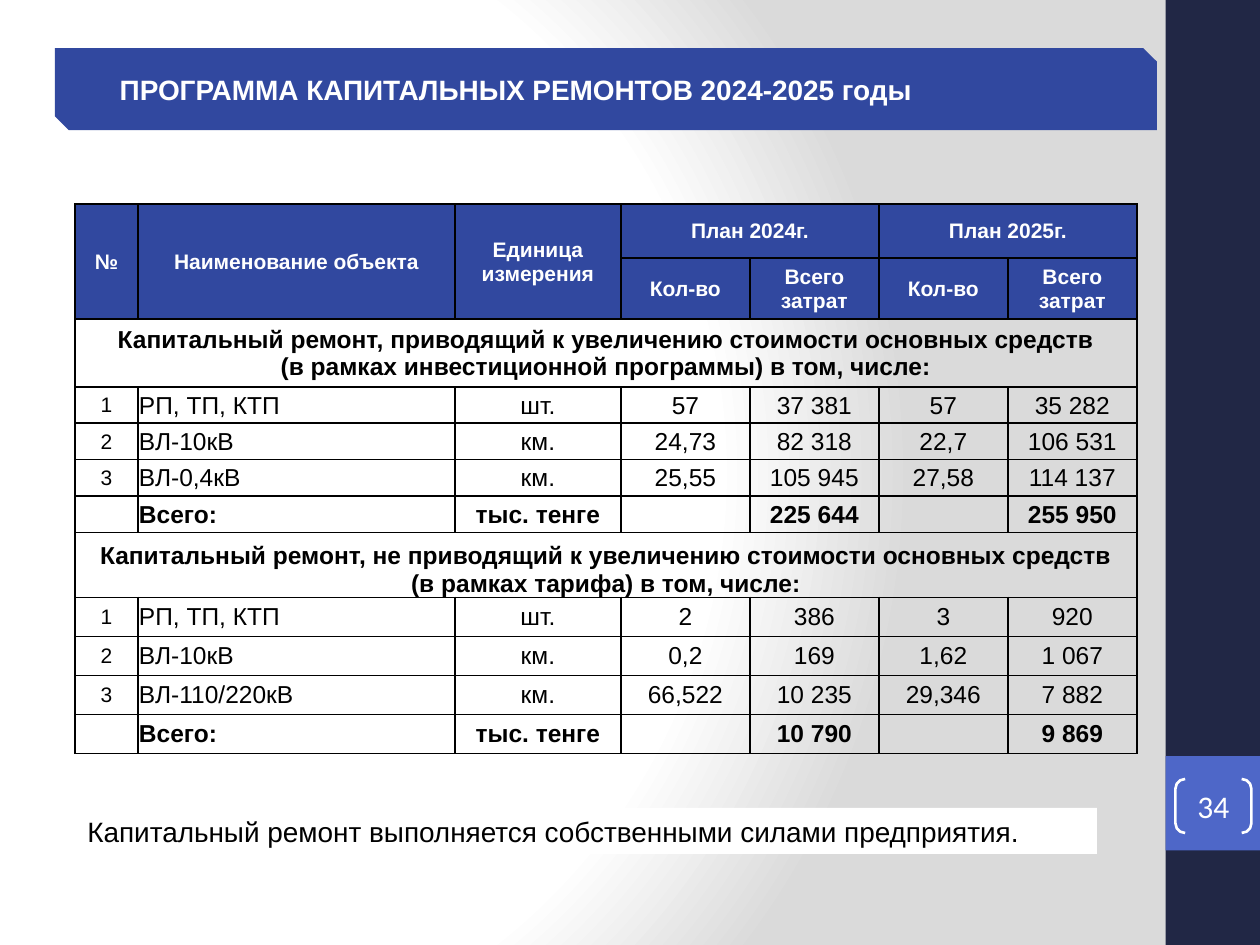
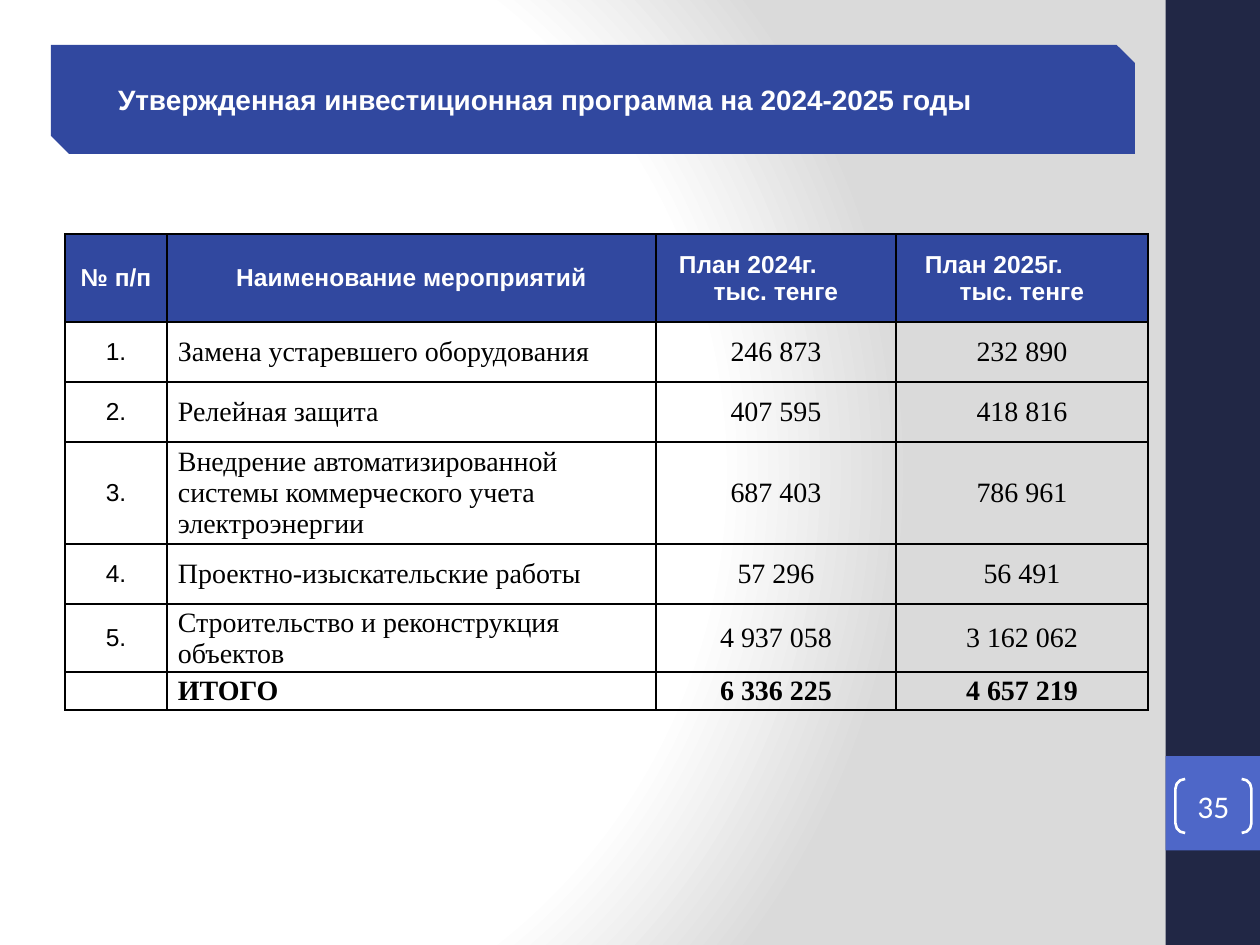
from dataclasses import dataclass

from lxml import etree
from pptx import Presentation
from pptx import util as u
from pptx.dml.color import RGBColor
from pptx.enum import shapes, text
from pptx.oxml import ns, parse_xml

PX = u.Inches(1) // 126
CENTER, LEFT = text.PP_ALIGN.CENTER, text.PP_ALIGN.LEFT
MIDDLE, BOTTOM = text.MSO_ANCHOR.MIDDLE, text.MSO_ANCHOR.BOTTOM
SHAPE = shapes.MSO_SHAPE


@dataclass(frozen=True)
class Theme:
    white: str = "FFFFFF"
    black: str = "000000"
    grey: str = "DADADA"
    navy: str = "212745"
    accent: str = "4E67C8"
    blue: str = "31489F"
    sans: str = "Arial"
    serif: str = "Times New Roman"
    number: str = "Calibri"
    small: int = 12
    body: int = 14
    large: int = 16
    page: int = 18
    border: int = 1


T = Theme()


def px(n):
    return int(n * PX)


def rgb(value):
    return RGBColor.from_string(value)


def set_background(s):
    """Radial white-to-grey gradient, centred left of the middle."""
    s.background.fill.solid()
    bg = s.element.find(".//" + ns.qn("p:bgPr"))
    stops = ((0, T.white), (75, T.white), (100, T.grey))
    gs = "".join(f'<a:gs pos="{pos * 1000}"><a:srgbClr val="{c}"/></a:gs>'
                 for pos, c in stops)
    bg.replace(bg[0], parse_xml(
        f'<a:gradFill {ns.nsdecls("a")} rotWithShape="1"><a:gsLst>{gs}</a:gsLst>'
        '<a:path path="circle"><a:fillToRect l="20000" t="50000" r="100000" '
        'b="50000"/></a:path></a:gradFill>'))


def add_box(s, box, fill=None, kind=SHAPE.RECTANGLE):
    sp = s.shapes.add_shape(kind, *map(px, box))
    sp.shadow.inherit = False
    sp.line.fill.background()
    if fill:
        sp.fill.solid()
        sp.fill.fore_color.rgb = rgb(fill)
    else:
        sp.fill.background()
    return sp


def set_insets(frame, left, top, right, bottom):
    frame.margin_left, frame.margin_top = px(left), px(top)
    frame.margin_right, frame.margin_bottom = px(right), px(bottom)


def write(p, words, size, color=T.black, font=T.sans, bold=False,
          align=LEFT, indent=0):
    p.alignment = align
    if indent:
        p._p.get_or_add_pPr().set("marL", str(px(indent)))
    r = p.add_run()
    r.text = words
    r.font.size, r.font.name, r.font.bold = u.Pt(size), font, bold
    r.font.color.rgb = rgb(color)


def add_side_band(s, box, number):
    x, y, w, h = box
    add_box(s, box, T.navy)
    tile_y = y + h * 4 // 5
    add_box(s, (x, tile_y, w, w), T.accent)
    sp = add_box(s, (x + 10, tile_y + 23, 76, 54), kind=SHAPE.DOUBLE_BRACKET)
    sp.adjustments[0] = 0.18
    sp.line.color.rgb = rgb(T.white)
    sp.line.width = u.Pt(1.5)
    tf = sp.text_frame
    tf.vertical_anchor = MIDDLE
    set_insets(tf, 0, 0, 0, 0)
    write(tf.paragraphs[0], str(number), T.page, T.white, T.number, align=CENTER)


def add_title(s, box, words):
    tf = add_box(s, box, T.blue, SHAPE.SNIP_2_DIAG_RECTANGLE).text_frame
    tf.word_wrap = True
    tf.vertical_anchor = MIDDLE
    set_insets(tf, 9, 5, 9, 5)
    write(tf.paragraphs[0], words, T.large, T.white, bold=True, indent=49)


def add_note(s, box, words):
    tf = add_box(s, box, T.white).text_frame
    tf.word_wrap = True
    tf.vertical_anchor = MIDDLE
    write(tf.paragraphs[0], words, T.large)


def style_cell(cell, fill):
    cell.vertical_anchor = MIDDLE
    set_insets(cell, 1, 1, 1, 0)
    tc_pr = cell._tc.get_or_add_tcPr()
    for side in ("lnL", "lnR", "lnT", "lnB"):
        tc_pr.append(parse_xml(
            f'<a:{side} {ns.nsdecls("a")} w="{u.Pt(T.border)}"><a:solidFill>'
            f'<a:srgbClr val="{T.black}"/></a:solidFill></a:{side}>'))
    if fill:
        cell.fill.solid()
        cell.fill.fore_color.rgb = rgb(fill)
    else:
        cell.fill.background()


def add_grid(s, origin, cols, rows, header_rows):
    """Bordered empty table with blue header rows."""
    x, y = origin
    table = s.shapes.add_table(len(rows), len(cols), px(x), px(y),
                               px(sum(cols)), px(sum(rows))).table
    table.first_row = table.horz_banding = False
    for col, width in zip(table.columns, cols):
        col.width = px(width)
    for i, (row, height) in enumerate(zip(table.rows, rows)):
        row.height = px(height)
        for cell in row.cells:
            style_cell(cell, T.blue if i < header_rows else None)
    return table


def write_cell(cell, words, size, **style):
    """One paragraph per line; an empty cell only keeps its type size."""
    tf = cell.text_frame
    if not words:
        end = etree.SubElement(tf.paragraphs[0]._p, ns.qn("a:endParaRPr"))
        end.set("sz", str(size * 100))
        return
    for i, line in enumerate(words.split("\n")):
        p = tf.add_paragraph() if i else tf.paragraphs[0]
        write(p, line, size, **style)


def add_repairs_table(s, origin):
    cols = [63, 317, 166] + [129] * 4
    rows = [54, 61, 68] + [36.4] * 4 + [65] + [39] * 4
    table = add_grid(s, origin, cols, rows, 2)
    heads = {(0, 0): "№", (0, 1): "Наименование объекта",
             (0, 2): "Единица измерения",
             (0, 3): "План 2024г.", (0, 5): "План 2025г."}
    for c in (3, 5):
        heads[1, c], heads[1, c + 1] = "Кол-во", "Всего затрат"
        table.cell(0, c).merge(table.cell(0, c + 1))
    for c in range(3):
        table.cell(0, c).merge(table.cell(1, c))
    for (r, c), words in heads.items():
        write_cell(table.cell(r, c), words, T.small, color=T.white, bold=True,
                   align=CENTER)

    sections = [
        (2, MIDDLE, "Капитальный ремонт, приводящий к увеличению стоимости "
         "основных средств\n(в рамках инвестиционной программы) в том, числе:", [
             ("1", "РП, ТП, КТП", "шт.", "57", "37 381", "57", "35 282"),
             ("2", "ВЛ-10кВ", "км.", "24,73", "82 318", "22,7", "106 531"),
             ("3", "ВЛ-0,4кВ", "км.", "25,55", "105 945", "27,58", "114 137"),
             ("", "Всего:", "тыс. тенге", "", "225 644", "", "255 950")]),
        (7, BOTTOM, "Капитальный ремонт, не приводящий к увеличению стоимости "
         "основных средств\n(в рамках тарифа) в том, числе:", [
             ("1", "РП, ТП, КТП", "шт.", "2", "386", "3", "920"),
             ("2", "ВЛ-10кВ", "км.", "0,2", "169", "1,62", "1 067"),
             ("3", "ВЛ-110/220кВ", "км.", "66,522", "10 235", "29,346", "7 882"),
             ("", "Всего:", "тыс. тенге", "", "10 790", "", "9 869")])]
    for top, anchor, heading, items in sections:
        head = table.cell(top, 0)
        head.merge(table.cell(top, len(cols) - 1))
        head.vertical_anchor = anchor
        write_cell(head, heading, T.body, bold=True, align=CENTER)
        for r, item in enumerate(items, top + 1):
            for c, words in enumerate(item):
                write_cell(table.cell(r, c), words, T.body if c else T.small,
                           bold=not item[0], align=LEFT if c == 1 else CENTER)


def add_investment_table(s, origin):
    cols = [102, 489, 240, 252]
    table = add_grid(s, origin, cols, [88, 60, 60, 102, 60, 68, 38], 1)
    head_style = dict(color=T.white, bold=True)
    for c, words in enumerate(("№ п/п", "Наименование мероприятий")):
        write_cell(table.cell(0, c), words, T.body, align=CENTER, **head_style)
    for c, year in ((2, 2024), (3, 2025)):
        tf = table.cell(0, c).text_frame
        write(tf.paragraphs[0], f"План {year}г.", T.body,
              indent=(cols[c] - 196) // 2, **head_style)
        write(tf.add_paragraph(), "тыс. тенге", T.body, align=CENTER, **head_style)

    items = [
        ("1.", "Замена устаревшего оборудования", "246 873", "232 890"),
        ("2.", "Релейная защита", "407 595", "418 816"),
        ("3.", "Внедрение автоматизированной системы коммерческого учета "
         "электроэнергии", "687 403", "786 961"),
        ("4.", "Проектно-изыскательские работы", "57 296", "56 491"),
        ("5.", "Строительство и реконструкция объектов", "4 937 058", "3 162 062"),
        ("", "ИТОГО", "6 336 225", "4 657 219")]
    for r, (number, *values) in enumerate(items, 1):
        write_cell(table.cell(r, 0), number, T.body, align=CENTER)
        table.cell(r, 1).margin_left = px(11)
        for c, words in enumerate(values, 1):
            write_cell(table.cell(r, c), words, T.large, font=T.serif,
                       bold=not number, align=LEFT if c == 1 else CENTER)


def add_slide(prs, number, title_box, title):
    s = prs.slides.add_slide(prs.slide_layouts[6])
    set_background(s)
    add_side_band(s, (1165.5, 0, 94.5, 945), number)
    add_title(s, title_box, title)
    return s


def main():
    prs = Presentation()
    prs.slide_width, prs.slide_height = px(1260), px(945)

    s = add_slide(prs, 34, (55, 48, 1102, 82),
                  "ПРОГРАММА КАПИТАЛЬНЫХ РЕМОНТОВ 2024-2025 годы")
    add_note(s, (75, 808, 1022, 46),
             "Капитальный ремонт выполняется собственными силами предприятия.")
    add_repairs_table(s, (75, 204))

    s = add_slide(prs, 35, (51, 45, 1084, 109),
                  "Утвержденная инвестиционная программа на 2024-2025 годы")
    add_investment_table(s, (65, 234))

    prs.save("out.pptx")


if __name__ == "__main__":
    main()
